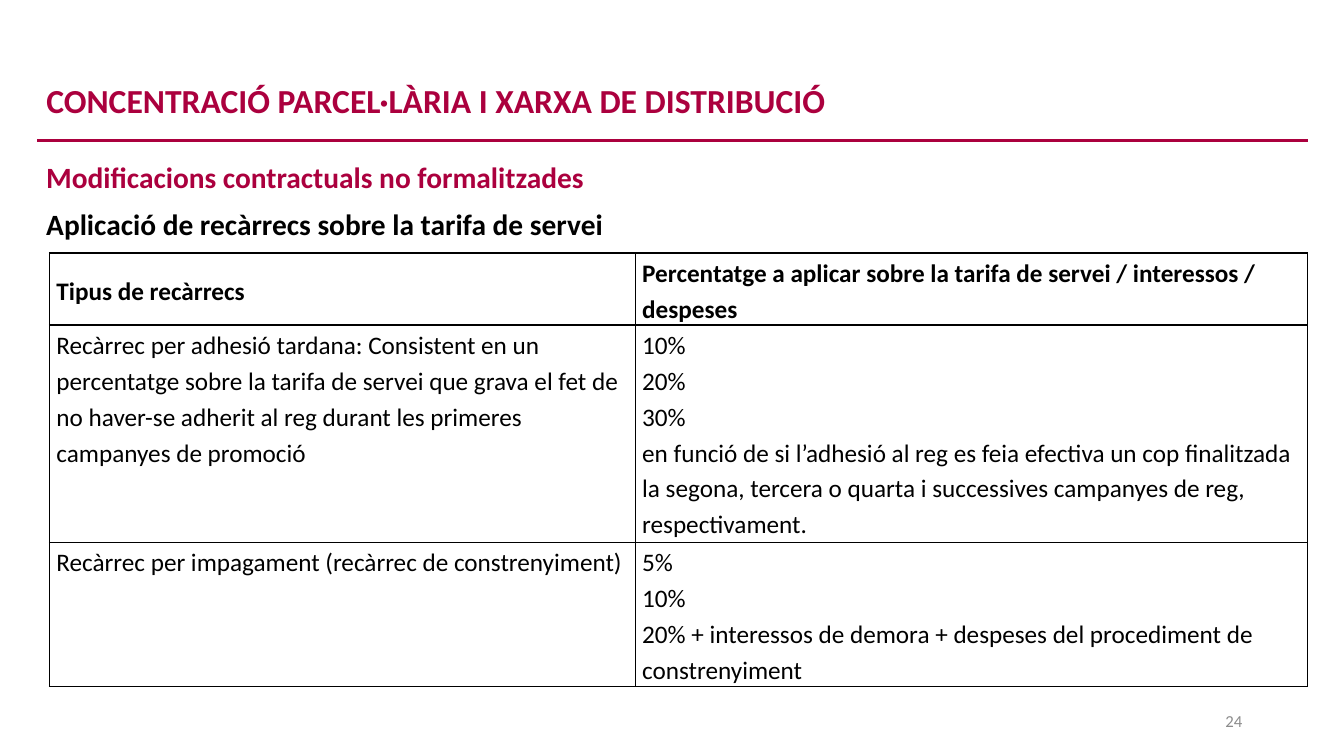
"""Build the slide on surcharges applied to the service tariff."""
from dataclasses import dataclass

from lxml.etree import SubElement
from pptx import Presentation
from pptx.dml.color import RGBColor
from pptx.enum.shapes import MSO_CONNECTOR
from pptx.enum.text import MSO_ANCHOR, MSO_AUTO_SIZE, PP_ALIGN
from pptx.oxml.ns import qn
from pptx.slide import Slide
from pptx.table import _Cell
from pptx.text.text import TextFrame, _Paragraph
from pptx.util import Inches, Pt

CRIMSON = RGBColor(0xAB, 0x00, 0x3E)
BLACK = RGBColor(0x00, 0x00, 0x00)
GREY = RGBColor(0x8C, 0x8C, 0x8C)
FONT = "Calibri"


@dataclass(frozen=True)
class Style:
    size: float
    color: RGBColor
    bold: bool = False
    align: PP_ALIGN = PP_ALIGN.LEFT
    anchor: MSO_ANCHOR = MSO_ANCHOR.TOP


@dataclass(frozen=True)
class Label:
    text: str
    left: float
    top: float
    width: float
    height: float
    style: Style


TITLE_STYLE = Style(24, CRIMSON, True, anchor=MSO_ANCHOR.MIDDLE)
HEADER_STYLE = Style(18, BLACK, True, anchor=MSO_ANCHOR.MIDDLE)
BODY_STYLE = Style(18, BLACK)

TITLE = Label("CONCENTRACIÓ PARCEL·LÀRIA I XARXA DE DISTRIBUCIÓ",
              0.36, 0.7, 12.6, 0.64, TITLE_STYLE)
LABELS = [
    Label("Modificacions contractuals no formalitzades", 0.36, 1.53, 11.59, 0.48,
          Style(21, CRIMSON, True, PP_ALIGN.JUSTIFY)),
    Label("Aplicació de recàrrecs sobre la tarifa de servei", 0.36, 2, 11.59, 0.48,
          Style(21, BLACK, True, PP_ALIGN.JUSTIFY)),
    Label("24", 9.42, 6.95, 3, 0.4,
          Style(12, GREY, align=PP_ALIGN.RIGHT, anchor=MSO_ANCHOR.MIDDLE)),
]

COLUMN_WIDTHS = [5.81, 6.67]
ROW_HEIGHTS = [0.7, 2.16, 1.43]
SURCHARGES: list[list[list[str]]] = [
    [["Tipus de recàrrecs"],
     ["Percentatge a aplicar sobre la tarifa de servei / interessos / despeses"]],
    [["Recàrrec per adhesió tardana: Consistent en un percentatge sobre la tarifa "
      "de servei que grava el fet de no haver-se adherit al reg durant les primeres "
      "campanyes de promoció"],
     ["10%\n20%\n30%",
      "en funció de si l’adhesió al reg es feia efectiva un cop finalitzada la segona, "
      "tercera o quarta i successives campanyes de reg, respectivament."]],
    [["Recàrrec per impagament (recàrrec de constrenyiment)"],
     ["5%\n10%\n20% + interessos de demora + despeses del procediment de constrenyiment"]],
]


def add_text(paragraph: _Paragraph, text: str, style: Style) -> None:
    """Add one run per line, with line breaks between them."""
    paragraph.alignment = style.align
    for index, line in enumerate(text.split("\n")):
        if index:
            paragraph.add_line_break()
        run = paragraph.add_run()
        run.text = line
        run.font.name = FONT
        run.font.size = Pt(style.size)
        run.font.bold = style.bold
        run.font.color.rgb = style.color


def fill_frame(text_frame: TextFrame, label: Label) -> None:
    """Set the text of a single-paragraph frame."""
    text_frame.word_wrap = True
    text_frame.auto_size = MSO_AUTO_SIZE.NONE
    text_frame.vertical_anchor = label.style.anchor
    add_text(text_frame.paragraphs[0], label.text, label.style)


def add_title(slide: Slide, label: Label) -> None:
    """Place and fill the title placeholder."""
    title = slide.shapes.title
    title.left, title.top = Inches(label.left), Inches(label.top)
    title.width, title.height = Inches(label.width), Inches(label.height)
    fill_frame(title.text_frame, label)
    title.text_frame.paragraphs[0].line_spacing = 0.9


def add_label(slide: Slide, label: Label) -> None:
    """Add a text box."""
    text_box = slide.shapes.add_textbox(Inches(label.left), Inches(label.top),
                                        Inches(label.width), Inches(label.height))
    fill_frame(text_box.text_frame, label)


def add_rule(slide: Slide) -> None:
    """Draw the rule below the title."""
    rule = slide.shapes.add_connector(MSO_CONNECTOR.STRAIGHT, Inches(0.37), Inches(1.39),
                                      Inches(12.97), Inches(1.39))
    rule.line.color.rgb = CRIMSON
    rule.line.width = Pt(2.25)
    SubElement(rule._element.spPr, qn("a:effectLst"))


def add_borders(cell: _Cell) -> None:
    """Give a cell a thin black border on every side."""
    properties = cell._tc.get_or_add_tcPr()
    for side in ("a:lnL", "a:lnR", "a:lnT", "a:lnB"):
        border = SubElement(properties, qn(side), w=str(Pt(1)))
        fill = SubElement(border, qn("a:solidFill"))
        SubElement(fill, qn("a:srgbClr"), val=str(BLACK))


def fill_cell(cell: _Cell, texts: list[str], style: Style) -> None:
    """Format a cell and write its paragraphs."""
    add_borders(cell)
    cell.fill.background()
    cell.vertical_anchor = style.anchor
    cell.margin_left = cell.margin_right = Inches(0.07)
    cell.margin_top = cell.margin_bottom = 0
    for index, text in enumerate(texts):
        text_frame = cell.text_frame
        paragraph = text_frame.add_paragraph() if index else text_frame.paragraphs[0]
        paragraph.line_spacing = 1.17
        add_text(paragraph, text, style)


def add_surcharge_table(slide: Slide) -> None:
    """Add the table of surcharges."""
    frame = slide.shapes.add_table(len(ROW_HEIGHTS), len(COLUMN_WIDTHS),
                                   Inches(0.49), Inches(2.51),
                                   Inches(sum(COLUMN_WIDTHS)), Inches(sum(ROW_HEIGHTS)))
    table = frame.table
    table.first_row = table.horz_banding = False
    for column, width in zip(table.columns, COLUMN_WIDTHS):
        column.width = Inches(width)
    for row_index, (row, height) in enumerate(zip(table.rows, ROW_HEIGHTS)):
        row.height = Inches(height)
        style = BODY_STYLE if row_index else HEADER_STYLE
        for cell, texts in zip(row.cells, SURCHARGES[row_index]):
            fill_cell(cell, texts, style)


def main() -> None:
    """Build and save the presentation."""
    presentation = Presentation()
    presentation.slide_width = Inches(13.33)
    presentation.slide_height = Inches(7.5)
    slide = presentation.slides.add_slide(presentation.slide_layouts.get_by_name("Title Only"))
    add_rule(slide)
    add_title(slide, TITLE)
    for label in LABELS:
        add_label(slide, label)
    add_surcharge_table(slide)
    presentation.save("out.pptx")


if __name__ == "__main__":
    main()
